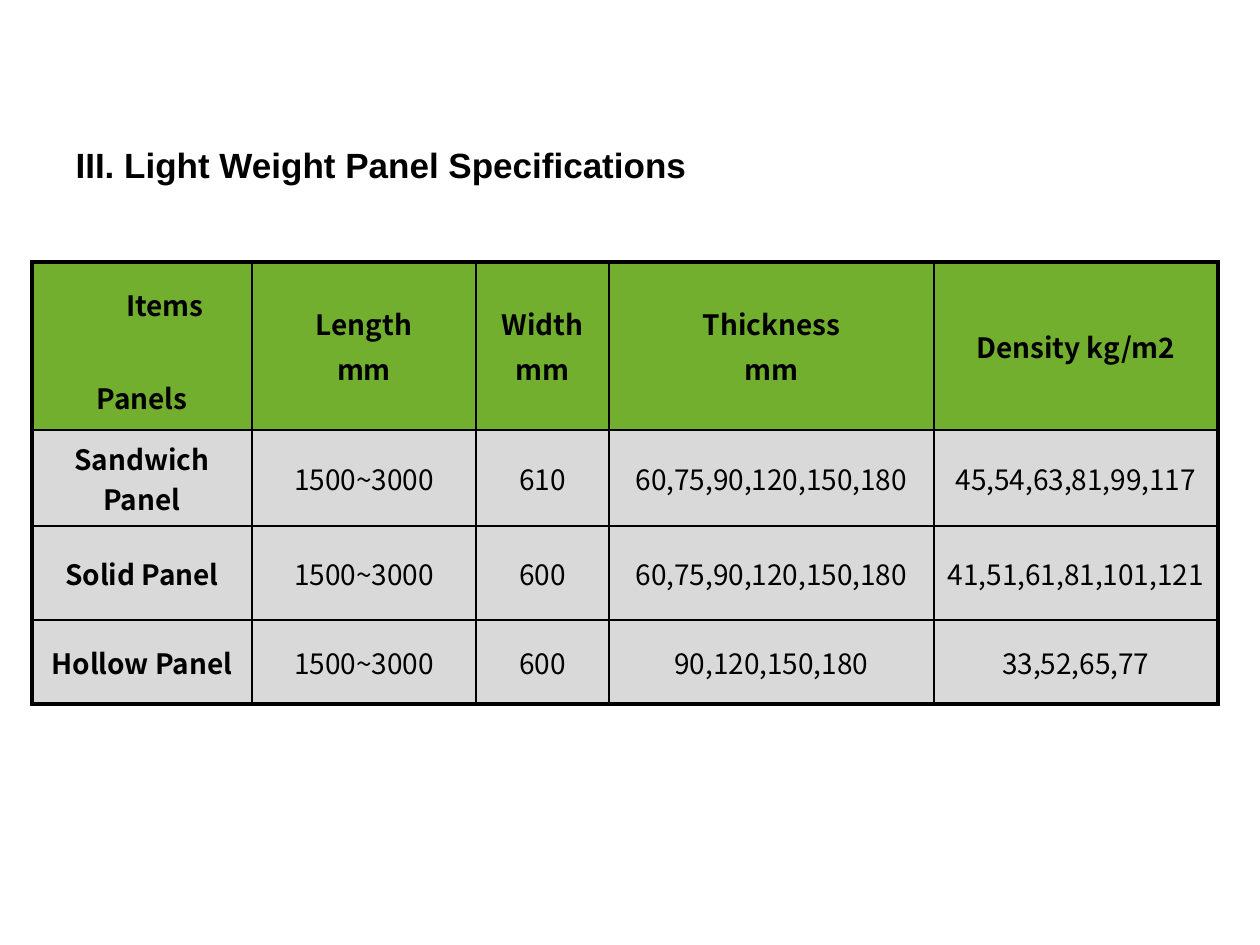
from dataclasses import dataclass

from lxml.etree import SubElement
from pptx import Presentation
from pptx.dml.color import RGBColor
from pptx.enum.text import MSO_ANCHOR, MSO_AUTO_SIZE, PP_ALIGN
from pptx.oxml.ns import qn
from pptx.util import Emu, Pt

COLORS = {"ink": "000000", "header": "72AF2F", "body": "D9D9D9"}
TITLE_FONT = {"name": "Arial", "size": Pt(20), "bold": True}
HEADING_FONT = {"name": "Noto Sans CJK SC", "size": Pt(16), "bold": True}
VALUE_FONT = {**HEADING_FONT, "bold": False}
OUTER_LINE, INNER_LINE = Pt(2.25), Pt(1)


@dataclass
class Panel:
    name: str
    length: str
    width: str
    thickness: str
    density: str

    def values(self) -> list[str]:
        return [self.name, self.length, self.width, self.thickness, self.density]


HEADINGS = ["Items\nPanels", "Length\nmm", "Width\nmm", "Thickness\nmm", "Density kg/m2"]
PANELS = [
    Panel("Sandwich Panel", "1500~3000", "610", "60,75,90,120,150,180", "45,54,63,81,99,117"),
    Panel("Solid Panel", "1500~3000", "600", "60,75,90,120,150,180", "41,51,61,81,101,121"),
    Panel("Hollow Panel", "1500~3000", "600", "90,120,150,180", "33,52,65,77"),
]
COLUMN_WIDTHS = [220, 224, 133, 325, 284]
ROW_HEIGHTS = [168, 96, 94, 84]


def px(length: int) -> Emu:
    """Length in px, at 126 px to the inch."""
    return Emu(round(length * 914400 / 126))


def format_font(font, values: dict) -> None:
    for attribute, value in values.items():
        setattr(font, attribute, value)
    font.color.rgb = RGBColor.from_string(COLORS["ink"])


def draw_borders(cell, widths: dict[str, int]) -> None:
    properties = cell._tc.get_or_add_tcPr()
    for side, width in widths.items():
        line = SubElement(properties, qn(f"a:ln{side}"), w=str(int(width)))
        SubElement(SubElement(line, qn("a:solidFill")), qn("a:srgbClr"), val=COLORS["ink"])


def fill_cell(cell, text: str, color: str, font: dict) -> None:
    cell.fill.solid()
    cell.fill.fore_color.rgb = RGBColor.from_string(COLORS[color])
    cell.vertical_anchor = MSO_ANCHOR.MIDDLE
    cell.text = text
    for index, paragraph in enumerate(cell.text_frame.paragraphs):
        paragraph.alignment = PP_ALIGN.CENTER
        if index:
            paragraph.space_before = Pt(3)
        for run in paragraph.runs:
            format_font(run.font, font)


def draw_title(slide, text: str) -> None:
    title = slide.shapes.title
    title.left, title.top, title.width, title.height = px(63), px(136), px(863), px(56)
    frame = title.text_frame
    frame.text = text
    frame.auto_size = MSO_AUTO_SIZE.NONE
    frame.vertical_anchor = MSO_ANCHOR.MIDDLE
    frame.paragraphs[0].alignment = PP_ALIGN.LEFT
    format_font(frame.paragraphs[0].runs[0].font, TITLE_FONT)


def draw_table(slide, rows: list[list[str]]) -> None:
    last_row, last_column = len(rows) - 1, len(rows[0]) - 1
    table = slide.shapes.add_table(
        len(rows), len(rows[0]), px(32), px(262),
        px(sum(COLUMN_WIDTHS)), px(sum(ROW_HEIGHTS)),
    ).table
    table.horz_banding = False
    for column, width in zip(table.columns, COLUMN_WIDTHS):
        column.width = px(width)
    for row, height in zip(table.rows, ROW_HEIGHTS):
        row.height = px(height)

    for r, values in enumerate(rows):
        for c, text in enumerate(values):
            cell = table.cell(r, c)
            on_edge = {"L": c == 0, "R": c == last_column, "T": r == 0, "B": r == last_row}
            draw_borders(cell, {s: OUTER_LINE if e else INNER_LINE for s, e in on_edge.items()})
            is_heading = r == 0 or c == 0
            fill_cell(cell, text, "body" if r else "header",
                      HEADING_FONT if is_heading else VALUE_FONT)

    # Corner cell: column label set to the right, row label well below it
    corner = table.cell(0, 0)
    corner.margin_top = px(16)
    items, panels = corner.text_frame.paragraphs
    items._p.get_or_add_pPr().set("marL", str(px(46)))
    panels.space_before = Pt(30.5)


def main() -> None:
    presentation = Presentation()
    presentation.slide_width, presentation.slide_height = px(1260), px(945)
    slide = presentation.slides.add_slide(presentation.slide_layouts[5])
    draw_title(slide, "III. Light Weight Panel Specifications")
    draw_table(slide, [HEADINGS] + [panel.values() for panel in PANELS])
    presentation.save("out.pptx")


if __name__ == "__main__":
    main()
